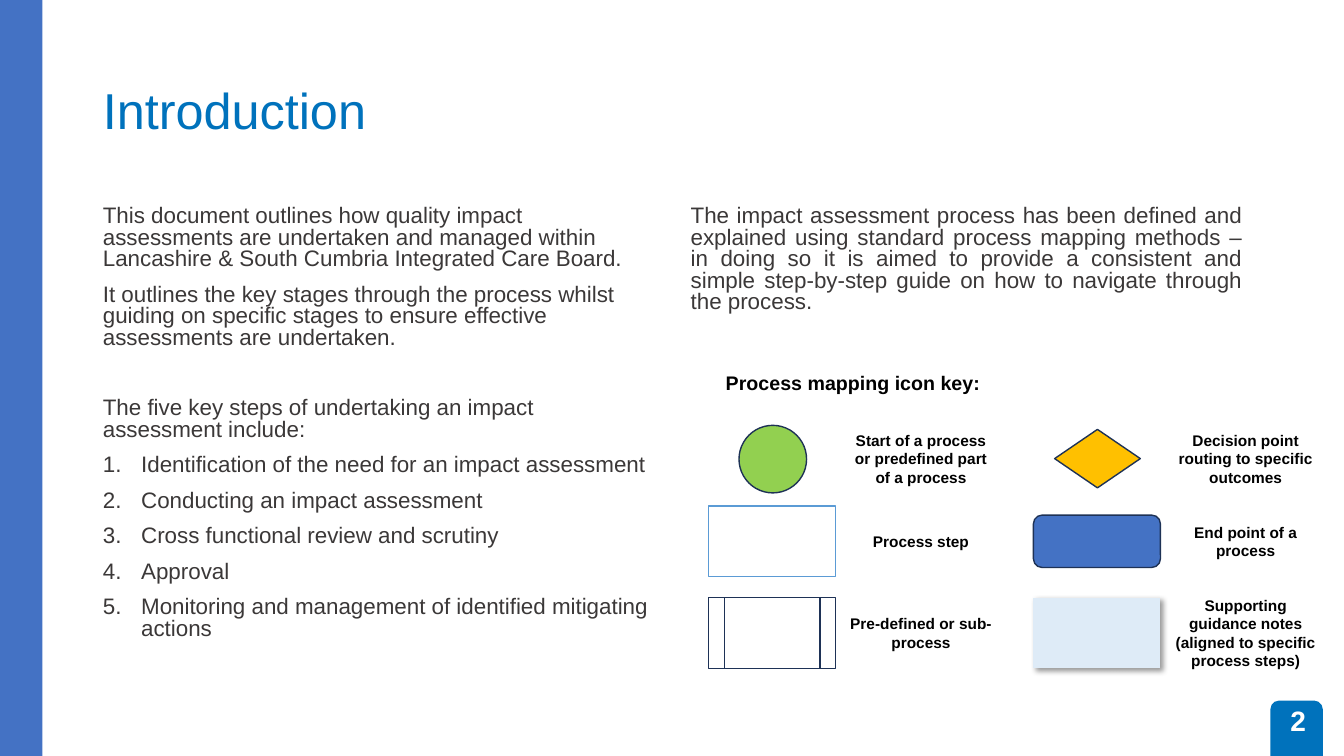
from lxml import etree
from pptx import Presentation
from pptx import util as u
from pptx.dml.color import RGBColor
from pptx.enum import shapes, text
from pptx.oxml import ns

PX = 9144  # EMU per px, 100 px to the inch
FONT = "Arial"
BLUE = RGBColor(0x00, 0x72, 0xBC)
BAR_BLUE = RGBColor(0x44, 0x72, 0xC4)
NAVY = RGBColor(0x1E, 0x32, 0x56)
SKY = RGBColor(0x5B, 0x9B, 0xD5)
PALE = RGBColor(0xDE, 0xEB, 0xF7)
GREEN = RGBColor(0x92, 0xD0, 0x50)
AMBER = RGBColor(0xFF, 0xC0, 0x00)
GREY = RGBColor(0x3B, 0x38, 0x38)
BLACK = RGBColor(0, 0, 0)
WHITE = RGBColor(0xFF, 0xFF, 0xFF)
LEFT, CENTER, JUSTIFY = text.PP_ALIGN.LEFT, text.PP_ALIGN.CENTER, text.PP_ALIGN.JUSTIFY
TOP, MIDDLE = text.MSO_ANCHOR.TOP, text.MSO_ANCHOR.MIDDLE
KIND = shapes.MSO_SHAPE


def write(shape, paragraphs, size, color, bold=False, align=LEFT, anchor=TOP,
          spacing=1.0, before=0, numbered_from=None, gap_at=None, gap=0):
    frame = shape.text_frame
    frame.word_wrap = True
    frame.auto_size = text.MSO_AUTO_SIZE.NONE
    frame.vertical_anchor = anchor
    for index, line in enumerate(paragraphs):
        paragraph = frame.paragraphs[0] if index == 0 else frame.add_paragraph()
        paragraph.text = line
        paragraph.alignment = align
        paragraph.line_spacing = spacing
        paragraph.space_after = u.Pt(0)
        paragraph.space_before = u.Pt(0 if index == 0 else gap if index == gap_at else before)
        properties = paragraph._p.get_or_add_pPr()
        numbered = numbered_from is not None and index >= numbered_from
        properties.set("marL", str(38 * PX if numbered else 0))
        properties.set("indent", str(-38 * PX if numbered else 0))
        if numbered:
            etree.SubElement(properties, ns.qn("a:buFont"), typeface="+mj-lt")
            etree.SubElement(properties, ns.qn("a:buAutoNum"), type="arabicPeriod")
        else:
            etree.SubElement(properties, ns.qn("a:buNone"))
        font = paragraph.font
        font.name, font.size, font.bold = FONT, u.Pt(size), bold
        font.color.rgb = color


def add_shape(kind, left, top, width, height, fill=None, line=None):
    shape = slide.shapes.add_shape(kind, left * PX, top * PX, width * PX, height * PX)
    shape.shadow.inherit = False
    if fill is None:
        shape.fill.background()
    else:
        shape.fill.solid()
        shape.fill.fore_color.rgb = fill
    if line is None:
        shape.line.fill.background()
    else:
        shape.line.color.rgb = line
        shape.line.width = u.Pt(1)
    return shape


presentation = Presentation()
presentation.slide_width, presentation.slide_height = 1333 * PX, 750 * PX
slide = presentation.slides.add_slide(presentation.slide_layouts[3])
title, left_body, right_body = slide.placeholders

# Side bar and page badge
add_shape(KIND.RECTANGLE, 0, 0, 42, 750, BAR_BLUE)
add_shape(KIND.ROUND_2_SAME_RECTANGLE, 1260, 695, 52, 55, BLUE)
page_number = slide.shapes.add_textbox(1262 * PX, 695 * PX, 51 * PX, 40 * PX)
write(page_number, ["2"], 20, WHITE, bold=True, align=CENTER, anchor=MIDDLE)

# Title and two columns of body text
for placeholder, (left, top, width, height) in (
    (title, (92, 40, 1023, 145)),
    (left_body, (92, 200, 567, 476)),
    (right_body, (675, 200, 567, 476)),
):
    placeholder.left, placeholder.top = left * PX, top * PX
    placeholder.width, placeholder.height = width * PX, height * PX

write(title, ["Introduction"], 36, BLUE, anchor=MIDDLE, spacing=0.9)
write(left_body, [
    "This document outlines how quality impact assessments are undertaken and managed "
    "within Lancashire & South Cumbria Integrated Care Board.",
    "It outlines the key stages through the process whilst guiding on specific stages "
    "to ensure effective assessments are undertaken.",
    "The five key steps of undertaking an impact assessment include:",
    "Identification of the need for an impact assessment",
    "Conducting an impact assessment",
    "Cross functional review and scrutiny",
    "Approval",
    "Monitoring and management of identified mitigating actions",
], 16, GREY, spacing=0.8, before=10, numbered_from=3, gap_at=2, gap=35)
write(right_body, [
    "The impact assessment process has been defined and explained using standard process "
    "mapping methods – in doing so it is aimed to provide a consistent and simple "
    "step-by-step guide on how to navigate through the process.",
], 16, GREY, align=JUSTIFY, spacing=0.8)

# Icon key: heading, then icons with their labels on a grid
heading = slide.shapes.add_textbox(710 * PX, 363 * PX, 606 * PX, 34 * PX)
write(heading, ["Process mapping icon key:"], 14, BLACK, bold=True)

LABEL_WIDTH, LABEL_HEIGHT = 161, 66
ROW_CENTERS = (455, 537, 628)
COLUMNS = (  # icon center, label left, icons from top to bottom
    (766, 833, (
        (KIND.FLOWCHART_CONNECTOR, 67, 67, GREEN, NAVY,
         "Start of a process or predefined part of a process"),
        (KIND.FLOWCHART_PROCESS, 126, 70, WHITE, SKY, "Process step"),
        (KIND.FLOWCHART_PREDEFINED_PROCESS, 126, 70, None, NAVY, "Pre-defined or sub-process"),
    )),
    (1088, 1155, (
        (KIND.FLOWCHART_DECISION, 85, 58, AMBER, NAVY,
         "Decision point routing to specific outcomes"),
        (KIND.FLOWCHART_ALTERNATE_PROCESS, 126, 52, BAR_BLUE, NAVY, "End point of a process"),
        (KIND.FLOWCHART_PROCESS, 126, 70, PALE, None,
         "Supporting guidance notes (aligned to specific process steps)"),
    )),
)
for icon_center, label_left, icons in COLUMNS:
    for middle, (kind, width, height, fill, line, caption) in zip(ROW_CENTERS, icons):
        label = add_shape(KIND.FLOWCHART_PROCESS, label_left, middle - LABEL_HEIGHT // 2,
                          LABEL_WIDTH, LABEL_HEIGHT, WHITE)
        write(label, [caption], 11, BLACK, bold=True, align=CENTER, anchor=MIDDLE)
        icon = add_shape(kind, icon_center - width // 2, middle - height // 2,
                         width, height, fill, line)

# Drop shadow under the last icon, the guidance note
effects = icon._element.spPr.find(ns.qn("a:effectLst"))
shadow = etree.SubElement(effects, ns.qn("a:outerShdw"), blurRad=str(u.Pt(4)),
                          dist=str(u.Pt(3)), dir="2700000", algn="tl", rotWithShape="0")
shadow_color = etree.SubElement(shadow, ns.qn("a:srgbClr"), val=str(BLACK))
etree.SubElement(shadow_color, ns.qn("a:alpha"), val="40000")

presentation.save("out.pptx")
